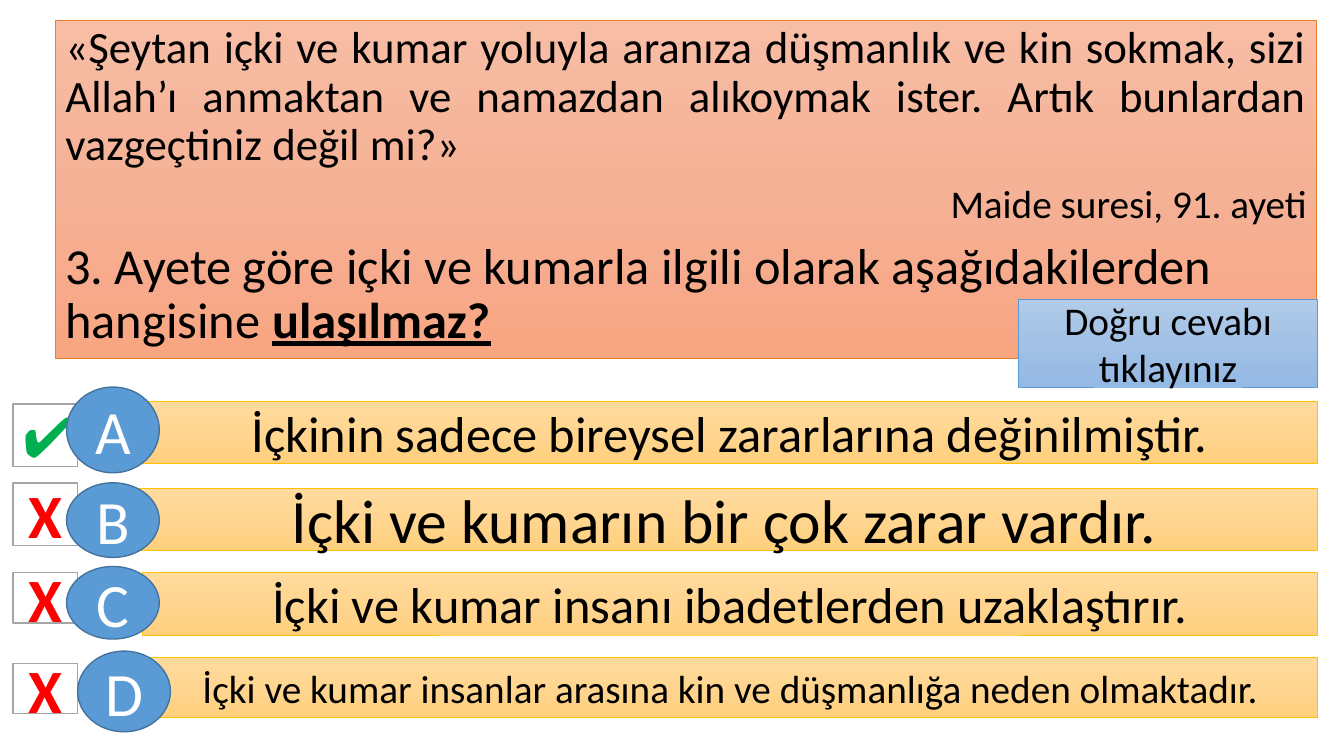
from copy import deepcopy

from pptx import Presentation
from pptx.dml.color import RGBColor
from pptx.enum.shapes import MSO_SHAPE
from pptx.enum.text import MSO_ANCHOR, PP_ALIGN
from pptx.util import Inches, Pt

FONT = "Calibri"
COLORS = {
    "text": "000000", "white": "FFFFFF", "right": "00B050", "wrong": "FF0000",
    "mark_line": "A5A5A5", "badge": "5B9BD5", "badge_line": "43739E",
    "quote_line": "ED7D31", "bar_line": "FFC000", "hint_line": "5B9BD5",
}
FADES = {
    "quote": ("F7BDA5", "F5B196", "F8A582"),
    "bar": ("FFDB9E", "FFD590", "FFD07C"),
    "hint": ("B1CBE9", "A3C1E5", "93B9E4"),
}
RIGHT = 13.07  # shared right edge of bars and hint

# letter, answer, size, bar (left, top, height), mark (top, height),
# badge (left, top, height)
ANSWERS = [
    ("A", "İçkinin sadece bireysel zararlarına değinilmiştir.", 36,
     (1.41, 3.98, 0.62), (4.01, 0.62), (0.66, 3.84, 0.85)),
    ("B", "İçki ve kumarın bir çok zarar vardır.", 44,
     (1.3, 4.84, 0.62), (4.79, 0.62), (0.66, 4.79, 0.74)),
    ("C", "İçki ve kumar insanı ibadetlerden uzaklaştırır.", 36,
     (1.41, 5.68, 0.62), (5.68, 0.5), (0.66, 5.62, 0.72)),
    ("D", "İçki ve kumar insanlar arasına kin ve düşmanlığa neden olmaktadır.", 28,
     (1.41, 6.52, 0.6), (6.58, 0.5), (0.77, 6.46, 0.8)),
]
CORRECT = "A"


def rgb(name):
    return RGBColor.from_string(COLORS[name])


def fade(shape, hues):
    """Fill the shape with a three-stop gradient running downwards."""
    fill = shape.fill
    fill.gradient()
    fill.gradient_angle = 270
    first = shape._element.spPr.find(".//{*}gs")
    first.addnext(deepcopy(first))
    for stop, place, hue in zip(fill.gradient_stops, (0, 0.5, 1), hues):
        stop.position = place
        stop.color.rgb = RGBColor.from_string(hue)


def style(run, size, color="text", bold=False):
    font = run.font
    font.name, font.size, font.bold = FONT, Pt(size), bold
    font.color.rgb = rgb(color)


def add_box(slide, box, fill, line, width, kind=MSO_SHAPE.RECTANGLE):
    shape = slide.shapes.add_shape(kind, *map(Inches, box))
    shape.shadow.inherit = False
    if fill in FADES:
        fade(shape, FADES[fill])
    else:
        shape.fill.solid()
        shape.fill.fore_color.rgb = rgb(fill)
    shape.line.color.rgb = rgb(line)
    shape.line.width = Pt(width)
    return shape


def label(shape, text, size, color="text", bold=False):
    frame = shape.text_frame
    frame.word_wrap = True
    frame.vertical_anchor = MSO_ANCHOR.MIDDLE
    para = frame.paragraphs[0]
    para.text = text
    para.alignment = PP_ALIGN.CENTER
    style(para.runs[0], size, color, bold)


def add_quote(slide, box):
    frame = add_box(slide, box, "quote", "quote_line", 0.5).text_frame
    frame.word_wrap = True
    frame.vertical_anchor = MSO_ANCHOR.TOP
    parts = [
        ("«Şeytan içki ve kumar yoluyla aranıza düşmanlık ve kin sokmak, sizi "
         "Allah’ı anmaktan ve namazdan alıkoymak ister. Artık bunlardan "
         "vazgeçtiniz değil mi?»", 32, PP_ALIGN.JUSTIFY),
        ("Maide suresi, 91. ayeti", 28, PP_ALIGN.RIGHT),
        ("3. Ayete göre içki ve kumarla ilgili olarak aşağıdakilerden "
         "hangisine ", 36, PP_ALIGN.LEFT),
    ]
    for index, (text, size, align) in enumerate(parts):
        para = frame.add_paragraph() if index else frame.paragraphs[0]
        para.text = text
        para.alignment = align
        para.line_spacing = 0.9
        para.space_before = Pt(10)
        style(para.runs[0], size)
    stress = para.add_run()
    stress.text = "ulaşılmaz?"
    style(stress, size, bold=True)
    stress.font.underline = True


def add_answer(slide, letter, text, size, bar, mark, badge):
    """Place one row: result mark, answer bar and letter badge on top."""
    top, height = mark
    shape = add_box(slide, (0.13, top, 0.64, height), "white", "mark_line", 1)
    if letter == CORRECT:
        label(shape, "✔", 40, "right")
    else:
        label(shape, "X", 44, "wrong", True)

    left, top, height = bar
    shape = add_box(slide, (left, top, RIGHT - left, height),
                    "bar", "bar_line", 0.5)
    label(shape, text, size)

    left, top, height = badge
    shape = add_box(slide, (left, top, 0.92, height),
                    "badge", "badge_line", 1, MSO_SHAPE.OVAL)
    label(shape, letter, 44, "white")


def add_hint(slide, box):
    label(add_box(slide, box, "hint", "hint_line", 0.5),
          "Doğru cevabı tıklayınız", 28)


def main():
    deck = Presentation()
    deck.slide_width, deck.slide_height = Inches(13.33), Inches(7.5)
    slide = deck.slides.add_slide(deck.slide_layouts[6])
    add_quote(slide, (0.55, 0.2, 12.51, 3.36))
    for answer in ANSWERS:
        add_answer(slide, *answer)
    add_hint(slide, (10.1, 2.97, 2.97, 0.87))
    deck.save("out.pptx")


if __name__ == "__main__":
    main()
